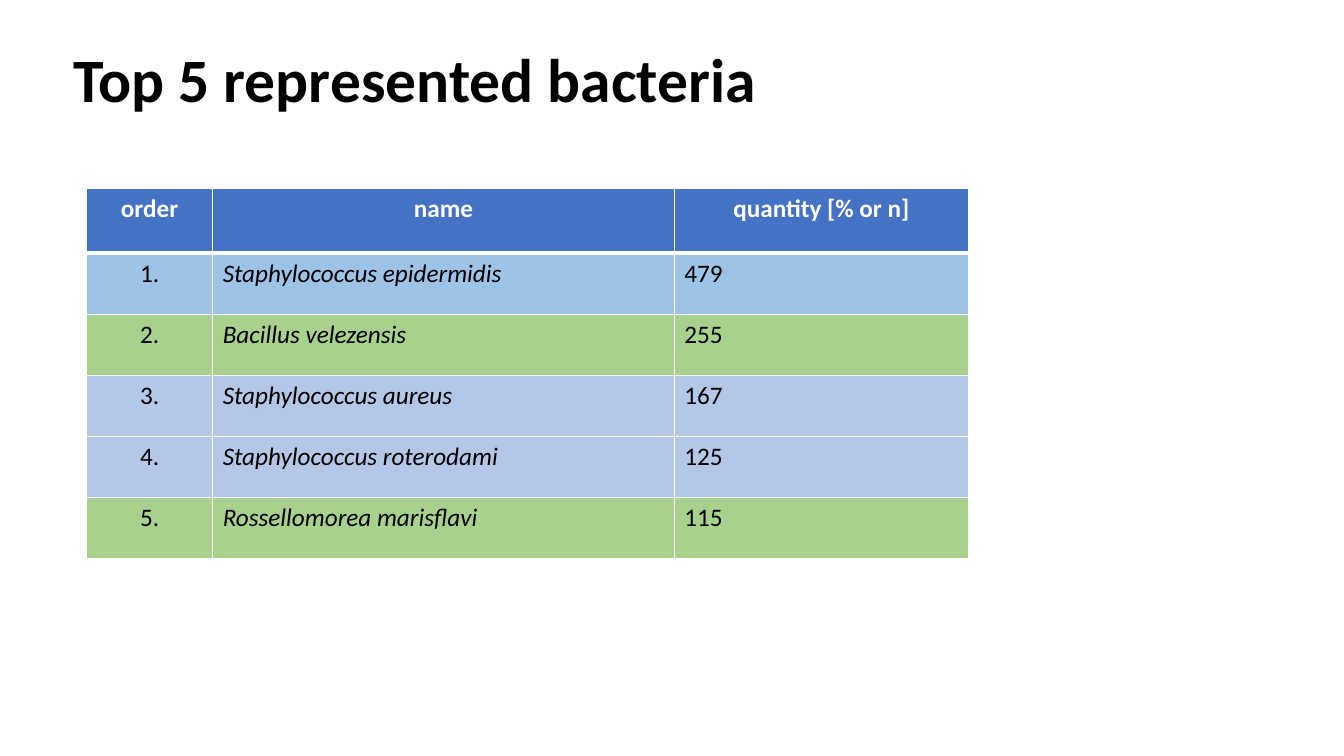
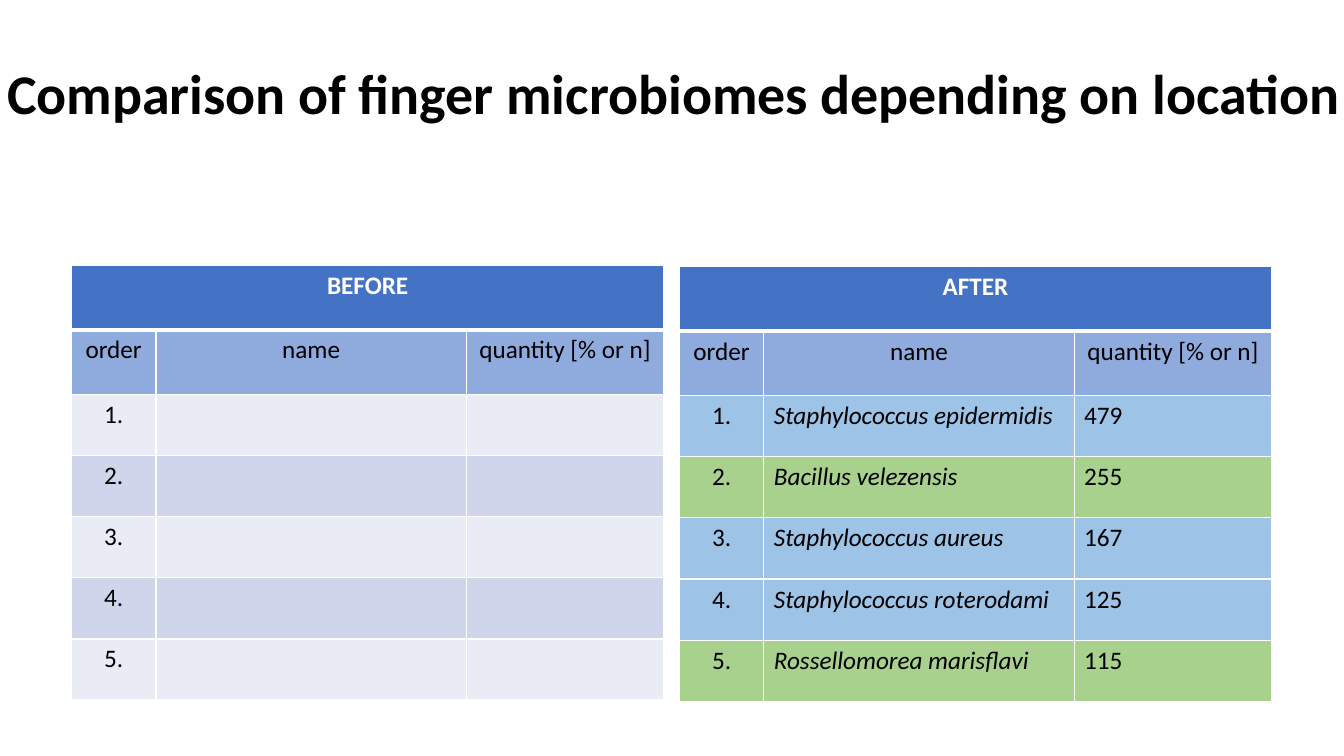
import pptx
import pptx.dml.color
import pptx.enum.text
import pptx.util
from lxml import etree
from pptx.oxml.ns import qn

Cm, Pt = pptx.util.Cm, pptx.util.Pt
Align = pptx.enum.text.PP_ALIGN
Anchor = pptx.enum.text.MSO_ANCHOR

# Content
HEADS = ["order", "name", "quantity [% or n]"]
TOP = [
    ("Staphylococcus epidermidis", "479"),
    ("Bacillus velezensis", "255"),
    ("Staphylococcus aureus", "167"),
    ("Staphylococcus roterodami", "125"),
    ("Rossellomorea marisflavi", "115"),
]
NONE = [("", "")] * len(TOP)

# Lengths are in centimetres; fills name the colour of each ranked row
WIDE = [3.18, 11.63, 7.42]
SLIM = [2.13, 7.82, 4.98]
SLIDES = [
    {"title": "Top 5 represented bacteria", "size": "large",
     "box": (1.6, 0.25, 33.05, 3.68), "align": Align.LEFT,
     "tables": [
         {"at": (2.18, 4.75), "cols": WIDE, "label": None, "data": TOP,
          "fills": ["sky", "green", "mist", "mist", "green"]}]},
    {"title": "Comparison of finger microbiomes depending on location",
     "size": "medium", "box": (-0.74, 0.58, 35.43, 3.68),
     "align": Align.CENTER,
     "tables": [
         {"at": (1.8, 6.68), "cols": SLIM, "label": "BEFORE", "data": NONE,
          "fills": ["pale", "grey", "pale", "grey", "pale"]},
         {"at": (17.12, 6.71), "cols": SLIM, "label": "AFTER", "data": TOP,
          "fills": ["sky", "green", "sky", "sky", "green"]}]},
]

# Theme
THEME = {
    "font": "Calibri",
    "sizes": {"large": 44, "medium": 40, "body": 18},
    "colors": {"black": "000000", "white": "FFFFFF", "blue": "4472C4",
               "steel": "8FAADC", "sky": "9DC3E6", "green": "A9D18E",
               "mist": "B4C7E7", "pale": "E9EBF5", "grey": "CFD5EA"},
    "lines": {"thin": 1, "thick": 3},
    "rows": {"head": 1.63, "body": 1.54},
}


def tint(name):
    return pptx.dml.color.RGBColor.from_string(THEME["colors"][name])


def write(frame, text, align, size="body", color="black", **style):
    """Fill the first paragraph of a text frame."""
    para = frame.paragraphs[0]
    para.alignment = align
    if not text:
        return para
    run = para.add_run()
    run.text = text
    look = {"name": THEME["font"], "size": Pt(THEME["sizes"][size]),
            "bold": False, "italic": False, **style}
    for key, value in look.items():
        setattr(run.font, key, value)
    run.font.color.rgb = tint(color)
    return para


def border(cell, **sides):
    """Draw white cell borders, thin unless a side says otherwise."""
    props = cell._tc.get_or_add_tcPr()
    for side in "LRTB":
        width = THEME["lines"][sides.get(side, "thin")]
        line = etree.SubElement(props, qn(f"a:ln{side}"), w=str(Pt(width)))
        fill = etree.SubElement(line, qn("a:solidFill"))
        etree.SubElement(fill, qn("a:srgbClr"), val=THEME["colors"]["white"])


def add_title(slide, page):
    frame = slide.shapes.add_textbox(*map(Cm, page["box"])).text_frame
    frame.word_wrap = True
    frame.vertical_anchor = Anchor.MIDDLE
    para = write(frame, page["title"], page["align"], page["size"], bold=True)
    para.line_spacing = 0.9


def plan_rows(item):
    """List each row as its texts, its fill and its kind."""
    rows = [(HEADS, "blue", "top")]
    if item["label"]:
        rows = [([item["label"], "", ""], "blue", "top"),
                (HEADS, "steel", "head")]
    for rank, (pair, fill) in enumerate(zip(item["data"], item["fills"]), 1):
        rows.append(([f"{rank}.", *pair], fill, "body"))
    return rows


def add_table(slide, item):
    rows, cols = plan_rows(item), item["cols"]
    tall = [THEME["rows"]["body" if kind == "body" else "head"]
            for _, _, kind in rows]
    grid = slide.shapes.add_table(
        len(rows), len(cols), *map(Cm, item["at"]),
        Cm(sum(cols)), Cm(sum(tall))).table
    grid.horz_banding = False
    for col, width in zip(grid.columns, cols):
        col.width = Cm(width)
    for row, height in zip(grid.rows, tall):
        row.height = Cm(height)
    if item["label"]:
        grid.cell(0, 0).merge(grid.cell(0, len(cols) - 1))

    for r, (texts, fill, kind) in enumerate(rows):
        sides = {0: {"B": "thick"}, 1: {"T": "thick"}}.get(r, {})
        for c, text in enumerate(texts):
            cell = grid.cell(r, c)
            border(cell, **sides)
            cell.fill.solid()
            cell.fill.fore_color.rgb = tint(fill)
            left = kind == "body" and c > 0
            write(cell.text_frame, text,
                  Align.LEFT if left else Align.CENTER,
                  color="white" if kind == "top" else "black",
                  bold=kind == "top", italic=kind == "body" and c == 1)


def main():
    deck = pptx.Presentation()
    deck.slide_width, deck.slide_height = Cm(33.87), Cm(19.05)
    for page in SLIDES:
        slide = deck.slides.add_slide(deck.slide_layouts[6])
        add_title(slide, page)
        for item in page["tables"]:
            add_table(slide, item)
    deck.save("out.pptx")


if __name__ == "__main__":
    main()
